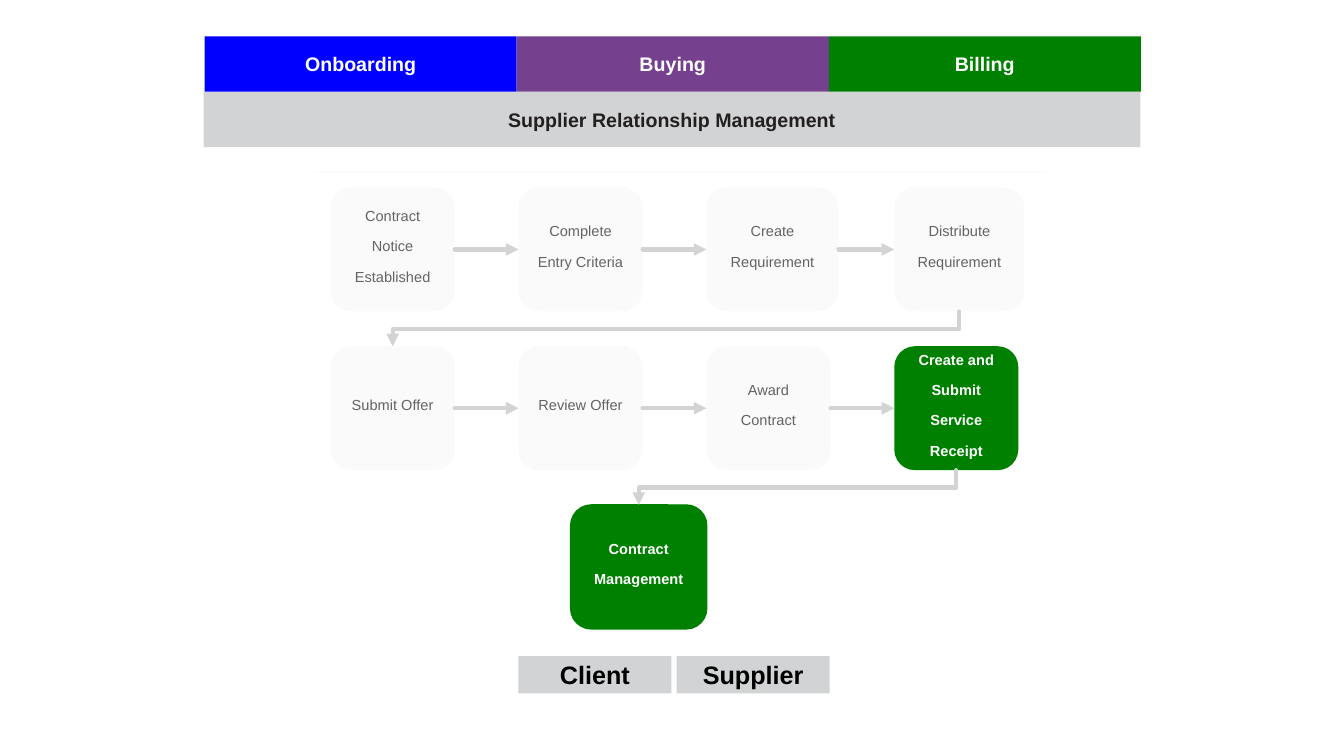
from lxml import etree
from pptx import Presentation
from pptx.dml.color import RGBColor
from pptx.enum.shapes import MSO_CONNECTOR, MSO_SHAPE
from pptx.enum.text import MSO_ANCHOR, PP_ALIGN
from pptx.oxml.ns import qn
from pptx.util import Inches, Pt

RECT, ROUNDED = MSO_SHAPE.RECTANGLE, MSO_SHAPE.ROUNDED_RECTANGLE
STRAIGHT, ELBOW = MSO_CONNECTOR.STRAIGHT, MSO_CONNECTOR.ELBOW
MIDDLE, CENTER = MSO_ANCHOR.MIDDLE, PP_ALIGN.CENTER
TOP, LEFT, BOTTOM, RIGHT = range(4)

WHITE = RGBColor(0xFF, 0xFF, 0xFF)
BLACK = RGBColor(0x00, 0x00, 0x00)
INK = RGBColor(0x23, 0x1F, 0x20)
BLUE = RGBColor(0x00, 0x00, 0xFF)
PURPLE = RGBColor(0x75, 0x40, 0x8D)
GREEN = RGBColor(0x00, 0x80, 0x00)
SILVER = RGBColor(0xD1, 0xD3, 0xD4)
PALE = RGBColor(0xFA, 0xFA, 0xFA)
GRAY = RGBColor(0x64, 0x63, 0x63)


def format_box(box, text, fill, color, size, bold=True, raised=False):
    """Fill a box and centre its text; raised text is superscript."""
    box.fill.solid()
    box.fill.fore_color.rgb = fill
    box.line.fill.background()
    box.shadow.inherit = False
    frame = box.text_frame
    frame.word_wrap = True
    frame.vertical_anchor = MIDDLE
    paragraph = frame.paragraphs[0]
    paragraph.alignment = CENTER
    run = paragraph.add_run()
    run.text = text
    run.font.color.rgb = color
    for key, value in {"name": "Arial", "size": Pt(size), "bold": bold}.items():
        setattr(run.font, key, value)
    if raised:
        run._r.get_or_add_rPr().set("baseline", "30000")


def format_line(line, color, width, arrow=False):
    line.line.color.rgb = color
    line.line.width = Pt(width)
    if arrow:
        outline = line.line._get_or_add_ln()
        outline.set("cap", "rnd")
        etree.SubElement(outline, qn("a:tailEnd")).set("type", "triangle")
    etree.SubElement(line._element.spPr, qn("a:effectLst"))


prs = Presentation()
prs.slide_width, prs.slide_height = Inches(13.33), Inches(7.5)
slide = prs.slides.add_slide(prs.slide_layouts[5])
shapes = slide.shapes

# Header: three phases above the title bar
PHASE_WIDTH, BAR_HEIGHT = 3.095, 0.55
phases = [("Onboarding", BLUE), ("Buying", PURPLE), ("Billing", GREEN)]
for i, (phase, fill) in enumerate(phases):
    phase_bar = shapes.add_shape(RECT, Inches(2.03 + i * PHASE_WIDTH), Inches(0.36),
                                 Inches(PHASE_WIDTH), Inches(BAR_HEIGHT))
    format_box(phase_bar, phase, fill, WHITE, 14)

title = shapes.title
title.left, title.top = Inches(2.02), Inches(0.91)
title.width, title.height = Inches(9.29), Inches(BAR_HEIGHT)
format_box(title, "Supplier Relationship Management", SILVER, INK, 14)

divider = shapes.add_connector(STRAIGHT, Inches(3.12), Inches(1.7), Inches(10.37), Inches(1.7))
format_line(divider, PALE, 0.5)

# Process steps: two rows of four, then the closing step
STEP_SIZE = 1.23
COLUMN_PITCH, ROW_PITCH = 5.59 / 3, 3.15 / 2
step_rows = [
    [("Contract Notice Established", STEP_SIZE), ("Complete Entry Criteria", STEP_SIZE),
     ("Create Requirement", 1.31), ("Distribute Requirement", 1.29)],
    [("Submit Offer", STEP_SIZE), ("Review Offer", STEP_SIZE),
     ("Award Contract", STEP_SIZE), ("Create and Submit Service Receipt", STEP_SIZE)],
    [("Contract Management", 1.35)],
]
row_lefts = [3.28, 3.28, 5.66]
active_steps = {"Create and Submit Service Receipt", "Contract Management"}

steps = []
for row, (row_left, labels) in enumerate(zip(row_lefts, step_rows)):
    for column, (label, width) in enumerate(labels):
        step = shapes.add_shape(ROUNDED, Inches(row_left + column * COLUMN_PITCH),
                                Inches(1.86 + row * ROW_PITCH),
                                Inches(width), Inches(STEP_SIZE))
        active = label in active_steps
        format_box(step, label, GREEN if active else PALE, WHITE if active else GRAY,
                   18, bold=active, raised=True)
        steps.append(step)
closing_step = steps[-1]
closing_step.line.color.rgb = GREEN
closing_step.line.width = Pt(1)

# Arrows: straight within a row, bent down to the next row
for source, target in zip(steps, steps[1:]):
    if source.top == target.top:
        arrow = shapes.add_connector(STRAIGHT, 0, 0, 0, 0)
        arrow.begin_connect(source, RIGHT)
        arrow.end_connect(target, LEFT)
    else:
        arrow = shapes.add_connector(ELBOW, 0, 0, 0, 0)
        arrow.begin_connect(source, BOTTOM)
        arrow.end_connect(target, TOP)
        # A quarter turn makes the bend leave downwards
        drop, run_length = arrow.height, arrow.width
        offset = (run_length - drop) // 2
        arrow.left, arrow.top = arrow.left + offset, arrow.top - offset
        arrow.width, arrow.height = drop, run_length
        frame = arrow._element.spPr.find(qn("a:xfrm"))
        frame.set("rot", "5400000")
        frame.set("flipH", "0")
    format_line(arrow, SILVER, 3, arrow=True)

# Parties
for i, party in enumerate(["Client", "Supplier"]):
    party_bar = shapes.add_shape(RECT, Inches(5.14 + i * 1.57), Inches(6.51),
                                 Inches(1.52), Inches(0.37))
    format_box(party_bar, party, SILVER, BLACK, 18)

prs.save("out.pptx")
